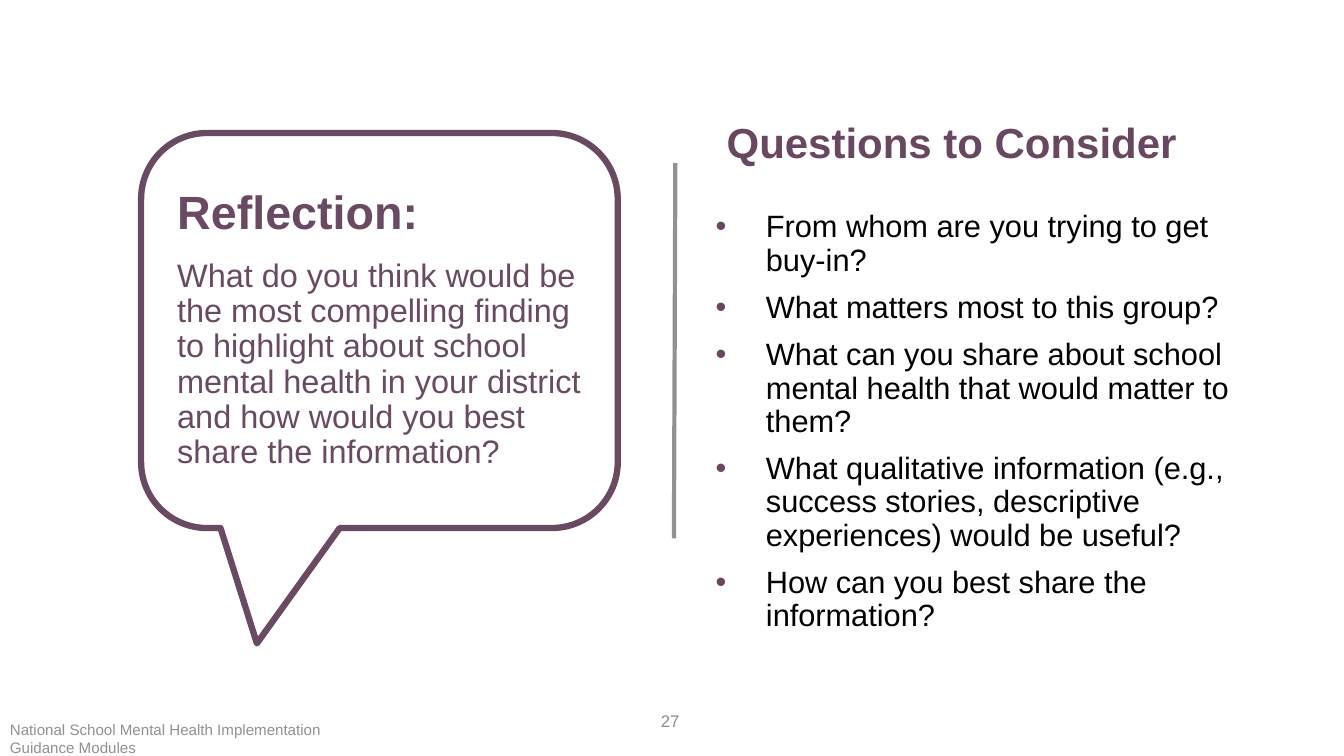
from pptx import Presentation
from pptx.dml.color import RGBColor
from pptx.enum import shapes as sh, text as tx
from pptx.oxml import parse_xml
from pptx.oxml import ns
from pptx.util import Pt

INK = {"plum": "6A4A62", "head": "684860", "body": "000000",
       "gray": "919195", "num": "8C8C8C"}
ASKS = [
    "From whom are you trying to get buy-in?",
    "What matters most to this group?",
    "What can you share about school mental health that would matter to them?",
    "What qualitative information (e.g., success stories, descriptive "
    "experiences) would be useful?",
    "How can you best share the information?",
]


def rgb(name):
    return RGBColor.from_string(INK[name])


def frame(slide, x, y, w, h):
    box = slide.shapes.add_textbox(Pt(x), Pt(y), Pt(w), Pt(h))
    box.text_frame.word_wrap = True
    return box.text_frame


def write(para, words, size, ink, bold=False):
    run = para.add_run()
    run.text = words
    font = run.font
    font.name, font.size, font.bold = "Arial", Pt(size), bold
    font.color.rgb = rgb(ink)


def dot(para, ink, indent):
    """Give a paragraph a coloured bullet with a hanging indent."""
    props = para._p.get_or_add_pPr()
    props.set("marL", str(Pt(indent)))
    props.set("indent", str(-Pt(indent)))
    space = ns.nsdecls("a")
    for xml in (f'<a:buClr {space}><a:srgbClr val="{INK[ink]}"/></a:buClr>',
                f'<a:buFont {space} typeface="Arial"/>',
                f'<a:buChar {space} char="•"/>'):
        props.append(parse_xml(xml))


def reflect(slide, x, y, w, h):
    # Speech bubble
    bubble = slide.shapes.add_shape(
        sh.MSO_SHAPE.ROUNDED_RECTANGULAR_CALLOUT, Pt(x), Pt(y), Pt(w), Pt(h))
    bubble.shadow.inherit = False
    bubble.fill.background()
    bubble.line.color.rgb = rgb("plum")
    bubble.line.width = Pt(4.5)
    for i, value in enumerate((-0.257, 0.792, 0.167)):
        bubble.adjustments[i] = value

    # Prompt
    body = frame(slide, x + 18.7, y + 43, 309, 216)
    title = body.paragraphs[0]
    title.line_spacing, title.space_after = 0.7, Pt(6)
    write(title, "Reflection:", 33.3, "plum", True)
    prompt = body.add_paragraph()
    prompt.line_spacing, prompt.space_before = 0.9, Pt(10)
    write(prompt, "What do you think would be the most compelling finding to "
          "highlight about school mental health in your district and how "
          "would you best share the information?", 23.2, "plum")


def consider(slide, x, y, w, h):
    # Heading
    head = frame(slide, x + 8, y, 396, 44)
    write(head.paragraphs[0], "Questions to Consider", 30, "head", True)

    # Bulleted questions
    top = 67.5
    body = frame(slide, x, y + top, w, h - top)
    for i, ask in enumerate(ASKS):
        para = body.paragraphs[0] if i == 0 else body.add_paragraph()
        para.line_spacing = 0.9
        if i:
            para.space_before = Pt(10)
        dot(para, "head", 36)
        write(para, ask, 22, "body")


def divide(slide, x, y, w, h):
    rule = slide.shapes.add_connector(
        sh.MSO_CONNECTOR.STRAIGHT, Pt(x + w), Pt(y), Pt(x), Pt(y + h))
    rule.line.color.rgb = rgb("gray")
    rule.line.width = Pt(3)
    rule._element.spPr.append(
        parse_xml(f'<a:effectLst {ns.nsdecls("a")}/>'))


def foot(slide, x, y, w, h):
    # Page number
    page = frame(slide, x + 276.5, y - 10.8, 216, h)
    page.vertical_anchor = tx.MSO_ANCHOR.MIDDLE
    page.paragraphs[0].alignment = tx.PP_ALIGN.RIGHT
    write(page.paragraphs[0], "27", 12, "num")

    # Series name
    name = frame(slide, x, y, w, h)
    write(name.paragraphs[0], "National School Mental Health Implementation "
          "Guidance Modules", 10.8, "gray")


def main():
    deck = Presentation()
    deck.slide_width, deck.slide_height = Pt(960), Pt(540)
    slide = deck.slides.add_slide(deck.slide_layouts[6])
    reflect(slide, 100.8, 95, 340.5, 282.2)
    consider(slide, 504, 80, 392.4, 422)
    divide(slide, 481.4, 116.6, 1, 268)
    foot(slide, 0, 511.2, 274.3, 28.8)
    deck.save("out.pptx")


if __name__ == "__main__":
    main()
